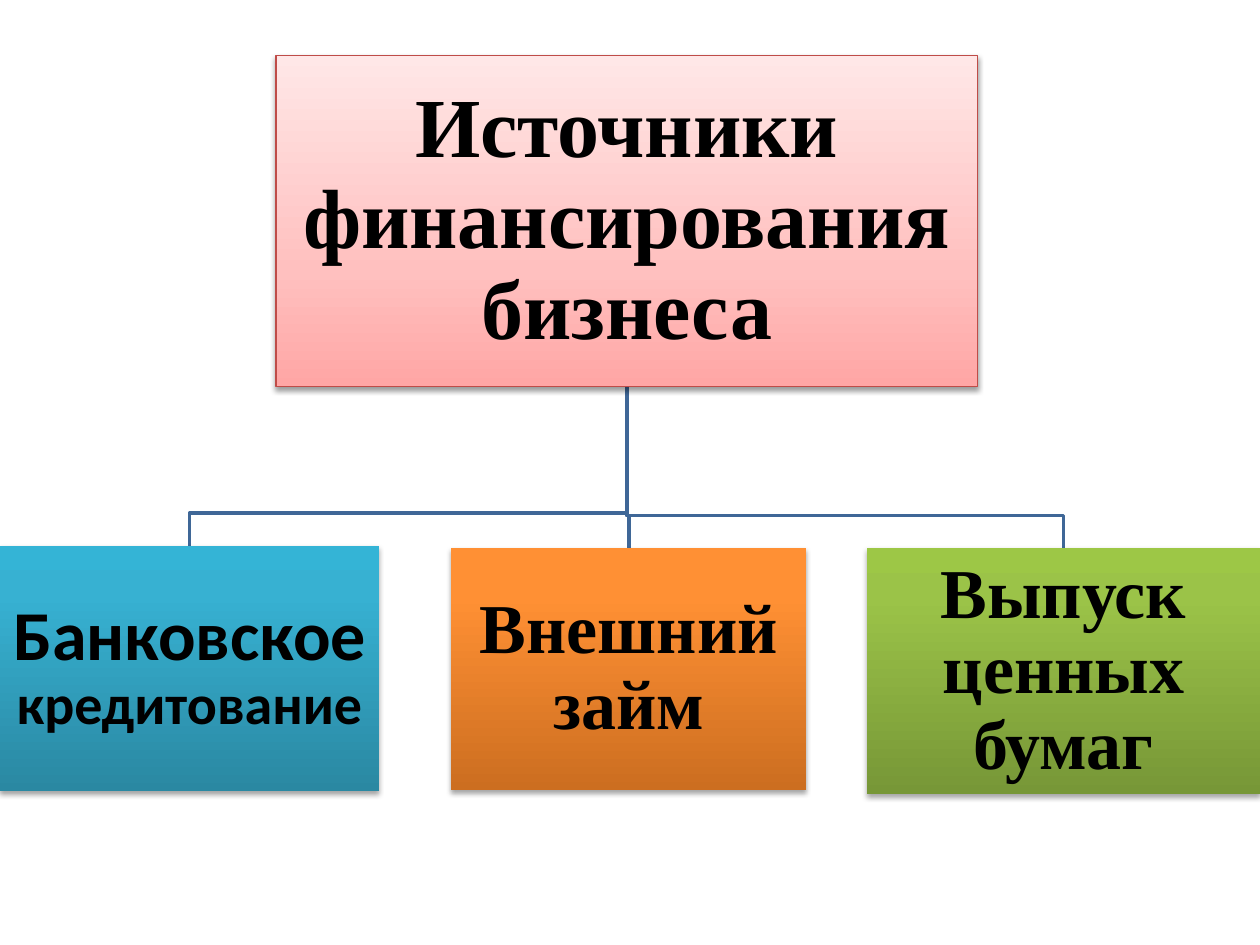
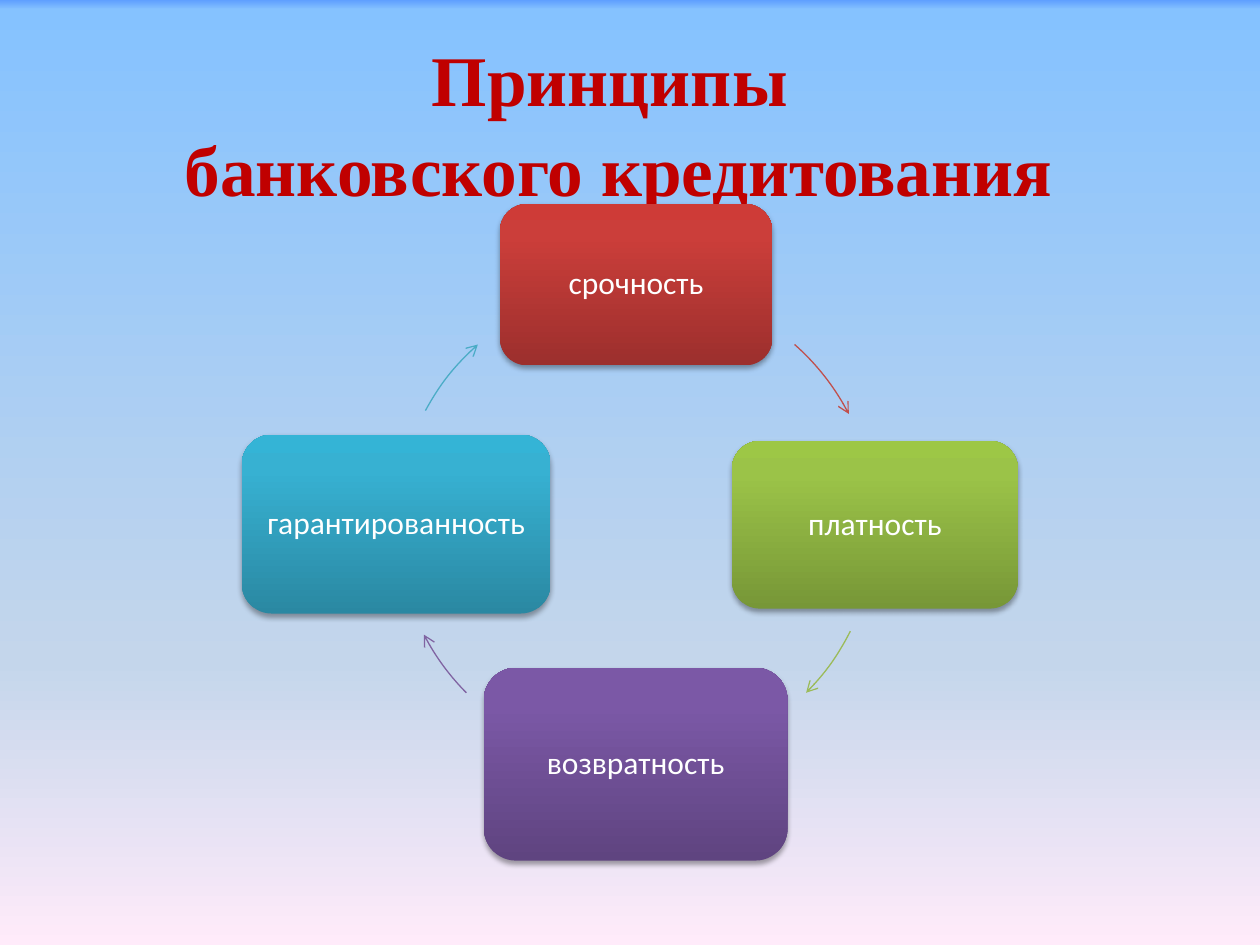
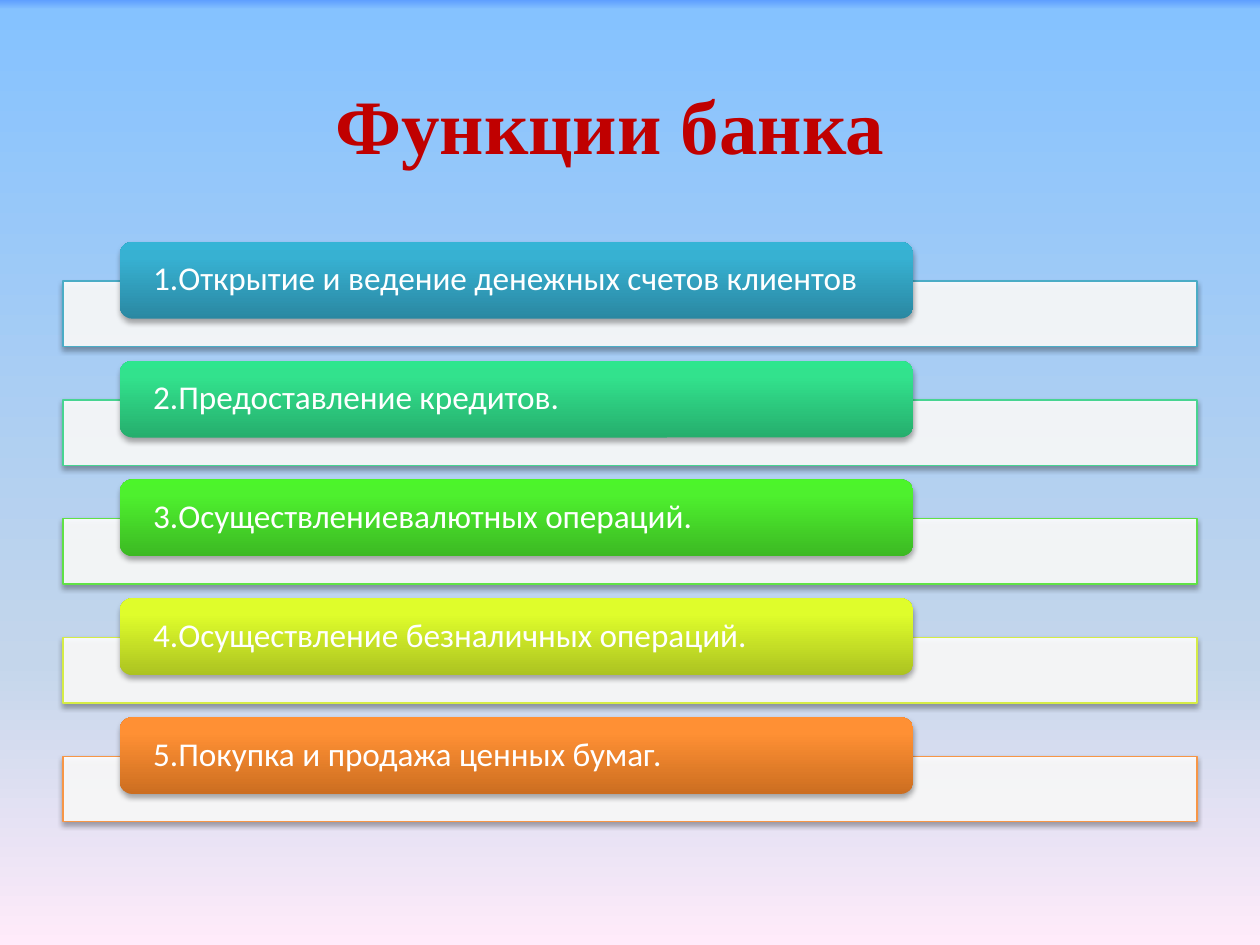
"""Build three slides on business financing, lending principles and bank functions."""
from dataclasses import dataclass, field
from typing import NamedTuple

from lxml import etree
from pptx import Presentation
from pptx.dml import color, fill as dml_fill
from pptx.enum import shapes, text
from pptx.oxml import ns
from pptx.shapes import autoshape
from pptx.slide import Slide
from pptx.util import Pt


class Tone(NamedTuple):
    """Line colour of an accent and its gradient from bottom to top."""
    line: str
    stops: tuple[tuple[int, str], ...]


class Box(NamedTuple):
    """Position and size in points."""
    left: float
    top: float
    width: float
    height: float

    @property
    def center(self) -> float:
        return self.left + self.width / 2


class Phrase(NamedTuple):
    """A run of text with its size."""
    wording: str
    size: float


class Shade(NamedTuple):
    """Opacity in percent and offset in points of a soft shadow."""
    opacity: int
    distance: float


def accent(line: str, low: str, middle: str, high: str) -> Tone:
    """Return a tone with the shared stop positions."""
    return Tone(line, ((0, low), (80, middle), (100, high)))


@dataclass(frozen=True)
class Theme:
    """Colours, fonts and type sizes of the deck."""
    serif: str = "Times New Roman"
    sans: str = "Calibri"
    title: str = "C00000"
    black: str = "000000"
    white: str = "FFFFFF"
    branch: str = "3F6797"
    root_size: float = 48
    source_size: float = 40
    source_small: float = 32
    long_title: float = 40.7
    short_title: float = 44
    principle_size: float = 18
    function_size: float = 19
    hairline: float = 0.75
    branch_width: float = 2
    shade: Shade = Shade(35, 1.8)
    root_shade: Shade = Shade(38, 1.6)
    sky: tuple = ((0, "5E9EFF"), (1, "85C2FF"), (70, "C4D6EB"), (100, "FFEBFA"))
    rose: Tone = Tone("BF4C48", ((0, "FFA6A5"), (35, "FFC0BF"), (100, "FFE7E7")))
    tones: dict[str, Tone] = field(default_factory=lambda: {
        "blue": accent("4BACC6", "2A88A2", "37B1D2", "34B4D6"),
        "orange": accent("F79646", "CC6E20", "FF9034", "FF9136"),
        "olive": accent("9BBB59", "779737", "9BC348", "9DC746"),
        "red": accent("C0504D", "9C2F2D", "CB3E3A", "CE3B37"),
        "violet": accent("8064A2", "5F4480", "7B58A6", "7C57A8"),
        "mint": accent("48D491", "26AE6D", "32E28D", "2EE68E"),
        "green": accent("60E146", "3CB923", "4EF02E", "4CF52A"),
        "lime": accent("D5EC46", "ACC321", "DFFD2B", "E1FF2B"),
    })


THEME = Theme()


class Source(NamedTuple):
    """A source of financing on the tree."""
    box: Box
    tone: str
    font: str
    phrases: tuple[Phrase, ...]


class Principle(NamedTuple):
    """A lending principle and the arc that leaves it, in degrees."""
    wording: str
    tone: str
    box: Box
    arc_start: float
    arc_end: float


class Function(NamedTuple):
    """A bank function and its tone."""
    wording: str
    tone: str


ROOT = Box(157.7, 31.7, 401, 189.4)
BEND_GAP = 18.6
SOURCES = (
    Source(Box(0, 311.8, 216.7, 140.4), "blue", THEME.sans,
           (Phrase("Банковское ", THEME.source_size),
            Phrase("кредитование", THEME.source_small))),
    Source(Box(257.8, 313.2, 203, 138.2), "orange", THEME.serif,
           (Phrase("Внешний займ", THEME.source_size),)),
    Source(Box(495.4, 313.2, 224.6, 140.4), "olive", THEME.serif,
           (Phrase("Выпуск ценных бумаг", THEME.source_size),)),
)

TITLE = Box(22.3, 22.3, 652.3, 93.6)
CYCLE = Box(226.8, 162.7, 273.6, 273.6)
PRINCIPLES = (
    Principle("срочность", "red", Box(285.8, 116.6, 155.5, 92.2), 311.4, 332.6),
    Principle("платность", "olive", Box(418.3, 252, 163.4, 95.8), 26.6, 44.8),
    Principle("возвратность", "violet", Box(276.5, 381.6, 173.5, 110.2), 135.2, 152.5),
    Principle("гарантированность", "blue", Box(138.2, 248.4, 176.4, 102.2), 208.3, 228.6),
)

BAR = Box(36, 160.6, 648, 37.4)
TAB = Box(68.4, 138.2, 453.6, 43.9)
FUNCTION_PITCH = 67.9
FUNCTIONS = (
    Function("1.Открытие и ведение денежных счетов клиентов", "blue"),
    Function("2.Предоставление кредитов.", "mint"),
    Function("3.Осуществлениевалютных операций.", "green"),
    Function("4.Осуществление безналичных операций.", "lime"),
    Function("5.Покупка и продажа ценных бумаг.", "orange"),
)


def rgb(value: str) -> color.RGBColor:
    """Return a colour from its hexadecimal form."""
    return color.RGBColor.from_string(value)


def points(box: Box) -> list[Pt]:
    """Return the sides of a box as lengths."""
    return [Pt(side) for side in box]


def child(parent: etree._Element, tag: str, **attributes: object) -> etree._Element:
    """Append a drawing element with attributes."""
    return etree.SubElement(parent, ns.qn(tag), {k: str(v) for k, v in attributes.items()})


def paint_gradient(fill: dml_fill.FillFormat, host: etree._Element,
                   stops: tuple[tuple[int, str], ...], angle: int) -> None:
    """Give a fill a linear gradient with any number of stops."""
    fill.gradient()
    gradient = next(host.iter(ns.qn("a:gradFill")))
    for part in list(gradient):
        gradient.remove(part)
    stop_list = child(gradient, "a:gsLst")
    for position, value in stops:
        stop = child(stop_list, "a:gs", pos=position * 1000)
        child(stop, "a:srgbClr", val=value)
    child(gradient, "a:lin", ang=angle * 60000, scaled=0)


def cast_shadow(shape: autoshape.Shape, shade: Shade) -> None:
    """Give a shape a soft shadow straight below it."""
    shape.shadow.inherit = False
    effects = shape._element.spPr.find(ns.qn("a:effectLst"))
    outer = child(effects, "a:outerShdw", blurRad=Pt(3.1), dist=Pt(shade.distance),
                  dir=5400000, rotWithShape=0)
    child(child(outer, "a:srgbClr", val=THEME.black), "a:alpha", val=shade.opacity * 1000)


def draw_outline(shape: autoshape.Shape, value: str, width: float) -> None:
    """Set the line colour and width of a shape."""
    shape.line.color.rgb = rgb(value)
    shape.line.width = Pt(width)


def draw_panel(slide: Slide, kind: shapes.MSO_SHAPE, box: Box, tone: Tone,
               shade: Shade = THEME.shade, outlined: bool = False) -> autoshape.Shape:
    """Draw a gradient panel with a shadow."""
    panel = slide.shapes.add_shape(kind, *points(box))
    paint_gradient(panel.fill, panel._element.spPr, tone.stops, 270)
    if outlined:
        draw_outline(panel, tone.line, THEME.hairline)
    else:
        panel.line.fill.background()
    cast_shadow(panel, shade)
    return panel


def write_label(panel: autoshape.Shape, phrases: tuple[Phrase, ...], font: str, ink: str,
                bold: bool = False, inset: tuple[float, float] = (2, 2),
                align: text.PP_ALIGN = text.PP_ALIGN.CENTER) -> None:
    """Write one paragraph inside a panel."""
    frame = panel.text_frame
    frame.word_wrap = True
    frame.vertical_anchor = text.MSO_ANCHOR.MIDDLE
    frame.margin_left = frame.margin_right = Pt(inset[0])
    frame.margin_top = frame.margin_bottom = Pt(inset[1])
    paragraph = frame.paragraphs[0]
    paragraph.alignment = align
    paragraph.line_spacing = 0.9
    for phrase in phrases:
        run = paragraph.add_run()
        run.text = phrase.wording
        style_run(run, font, phrase.size, ink, bold)


def style_run(run: object, font: str, size: float, ink: str, bold: bool) -> None:
    """Set the font of a run."""
    run.font.name, run.font.size, run.font.bold = font, Pt(size), bold
    run.font.color.rgb = rgb(ink)


def draw_branch(slide: Slide, target: Box) -> None:
    """Draw an elbow from the root down to a source."""
    bottom, bend = ROOT.top + ROOT.height, target.top - BEND_GAP
    builder = slide.shapes.build_freeform(Pt(ROOT.center), Pt(bottom))
    corners = ((ROOT.center, bend), (target.center, bend), (target.center, target.top))
    builder.add_line_segments([(Pt(x), Pt(y)) for x, y in corners], close=False)
    branch = builder.convert_to_shape()
    branch.fill.background()
    draw_outline(branch, THEME.branch, THEME.branch_width)
    branch.shadow.inherit = False


def draw_arc(slide: Slide, principle: Principle) -> None:
    """Draw the arrow along the cycle to the next principle."""
    arc = slide.shapes.add_shape(shapes.MSO_SHAPE.ARC, *points(CYCLE))
    for index, degrees in enumerate((principle.arc_start, principle.arc_end)):
        arc.adjustments[index] = degrees * 0.6
    arc.fill.background()
    draw_outline(arc, THEME.tones[principle.tone].line, THEME.hairline)
    child(arc.line._get_or_add_ln(), "a:tailEnd", type="arrow")
    arc.shadow.inherit = False


def start_titled(deck: Presentation, lines: tuple[str, ...], size: float) -> Slide:
    """Add a slide with the sky background and a title."""
    slide = add_blank(deck)
    paint_gradient(slide.background.fill, slide._element, THEME.sky, 90)
    frame = slide.shapes.add_textbox(*points(TITLE)).text_frame
    frame.word_wrap = True
    frame.vertical_anchor = text.MSO_ANCHOR.MIDDLE
    frame.text = "\n".join(lines)
    for paragraph in frame.paragraphs:
        paragraph.alignment = text.PP_ALIGN.CENTER
        paragraph.line_spacing = 1.05
        style_run(paragraph.runs[0], THEME.serif, size, THEME.title, True)
    for paragraph in frame.paragraphs[1:]:
        paragraph._p.get_or_add_pPr().set("marL", str(Pt(10)))
    return slide


def add_blank(deck: Presentation) -> Slide:
    """Add a slide on the blank layout."""
    return deck.slides.add_slide(deck.slide_layouts[6])


def build_sources(deck: Presentation) -> None:
    """Build the tree of financing sources."""
    slide = add_blank(deck)
    for source in reversed(SOURCES):
        draw_branch(slide, source.box)
    root = draw_panel(slide, shapes.MSO_SHAPE.RECTANGLE, ROOT, THEME.rose,
                      THEME.root_shade, outlined=True)
    write_label(root, (Phrase("Источники финансирования бизнеса", THEME.root_size),),
                THEME.serif, THEME.black, bold=True)
    for source in SOURCES:
        panel = draw_panel(slide, shapes.MSO_SHAPE.RECTANGLE, source.box,
                           THEME.tones[source.tone])
        write_label(panel, source.phrases, source.font, THEME.black, bold=True)


def build_principles(deck: Presentation) -> None:
    """Build the cycle of lending principles."""
    slide = start_titled(deck, ("Принципы", "банковского кредитования"), THEME.long_title)
    for principle in PRINCIPLES:
        panel = draw_panel(slide, shapes.MSO_SHAPE.ROUNDED_RECTANGLE, principle.box,
                           THEME.tones[principle.tone])
        write_label(panel, (Phrase(principle.wording, THEME.principle_size),),
                    THEME.sans, THEME.white, inset=(5, 5))
        draw_arc(slide, principle)


def build_functions(deck: Presentation) -> None:
    """Build the list of bank functions."""
    slide = start_titled(deck, ("Функции банка",), THEME.short_title)
    for row, function in enumerate(FUNCTIONS):
        tone, drop = THEME.tones[function.tone], row * FUNCTION_PITCH
        bar = slide.shapes.add_shape(shapes.MSO_SHAPE.RECTANGLE,
                                     *points(BAR._replace(top=BAR.top + drop)))
        bar.fill.solid()
        bar.fill.fore_color.rgb = rgb(THEME.white)
        child(next(bar._element.spPr.iter(ns.qn("a:srgbClr"))), "a:alpha", val=90000)
        draw_outline(bar, tone.line, THEME.hairline)
        cast_shadow(bar, THEME.shade)
        tab = draw_panel(slide, shapes.MSO_SHAPE.ROUNDED_RECTANGLE,
                         TAB._replace(top=TAB.top + drop), tone)
        write_label(tab, (Phrase(function.wording, THEME.function_size),), THEME.sans,
                    THEME.white, inset=(17, 0), align=text.PP_ALIGN.LEFT)


def main() -> None:
    """Build and save the deck."""
    deck = Presentation()
    deck.slide_width, deck.slide_height = Pt(720), Pt(540)
    build_sources(deck)
    build_principles(deck)
    build_functions(deck)
    deck.save("out.pptx")


if __name__ == "__main__":
    main()
